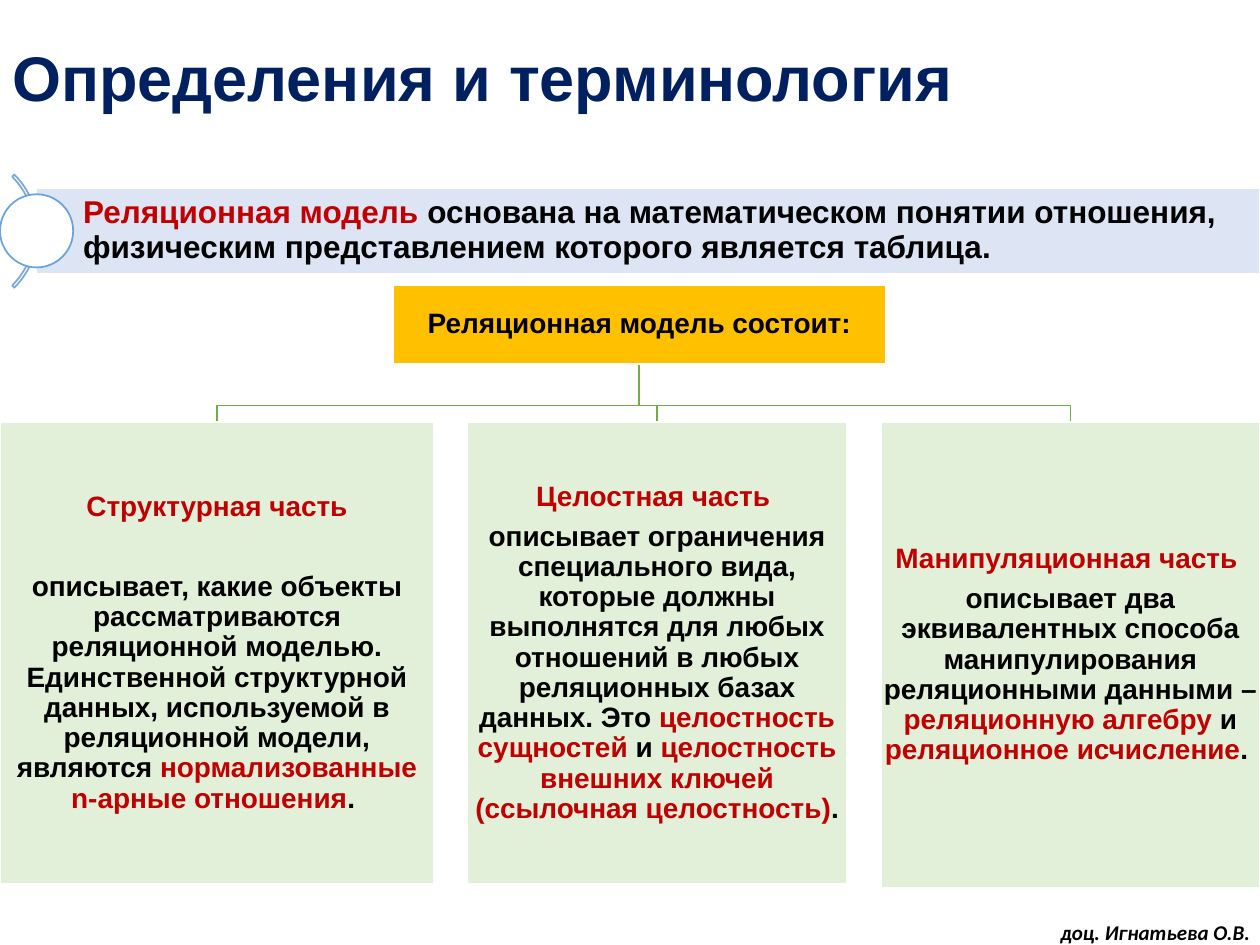
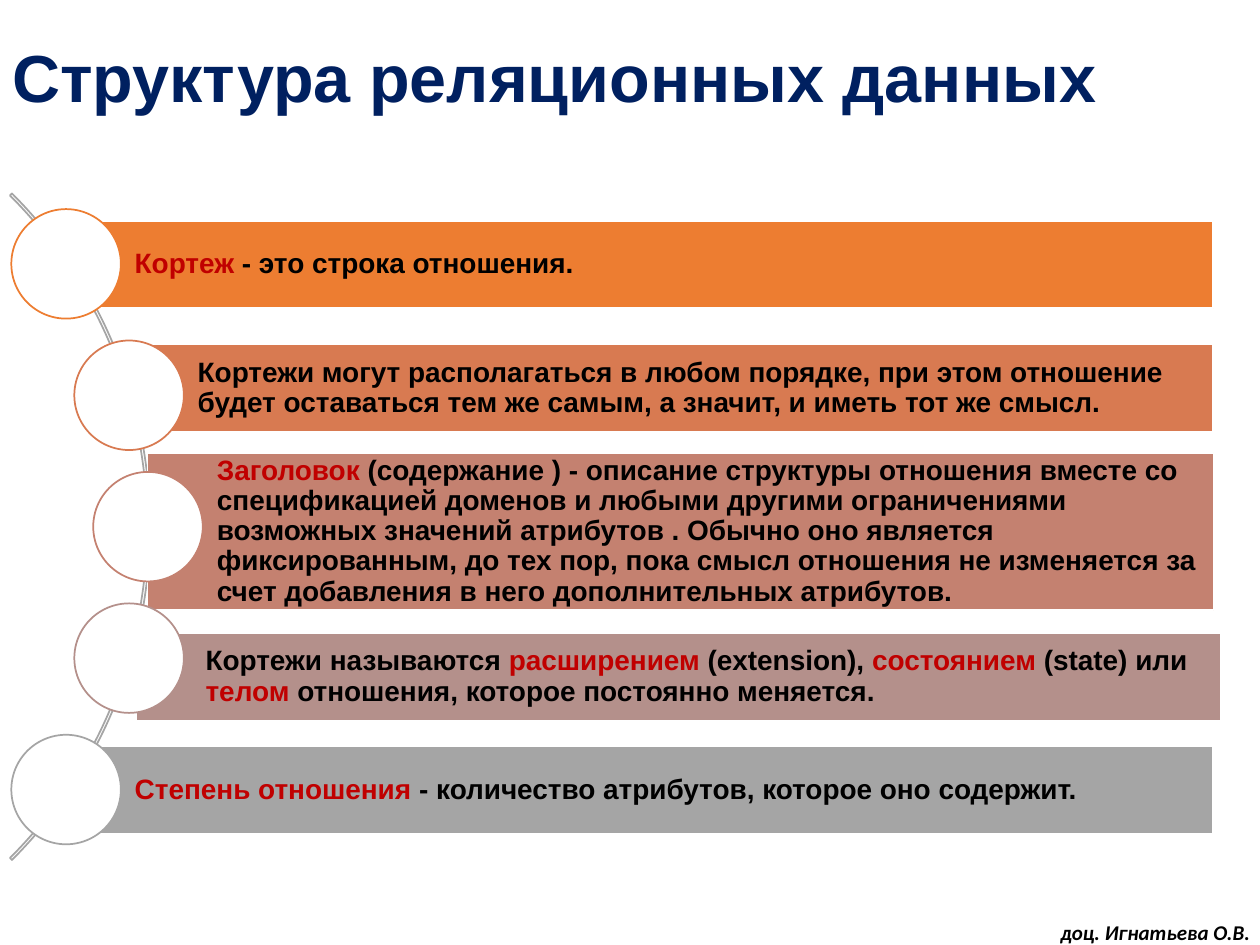
"""Builds two slides on the definitions and data structure of the relational model."""
from lxml import etree
from pptx import Presentation
from pptx import util as u
from pptx.dml.color import RGBColor
from pptx.enum import shapes, text
from pptx.oxml.ns import qn

Pt = u.Pt
MSO = shapes.MSO_SHAPE
COLORS = {
    "navy": "002060", "black": "000000", "red": "C00000", "white": "FFFFFF",
    "gold": "FFC000", "mint": "E2F0D9", "green": "70AD47",
    "pale": "DAE3F3", "blue": "5B9BD5", "sky": "7AA9DA",
    "orange": "ED7D31", "copper": "D87A51", "clay": "C48170",
    "mauve": "B4908B", "gray": "A5A5A5",
}
LEFT, CENTER = text.PP_ALIGN.LEFT, text.PP_ALIGN.CENTER


def add_box(s, kind, x, y, w, h, fill, line):
    sp = s.shapes.add_shape(kind, Pt(x), Pt(y), Pt(w), Pt(h))
    sp.shadow.inherit = False
    if fill:
        sp.fill.solid()
        sp.fill.fore_color.rgb = RGBColor.from_string(COLORS[fill])
    else:
        sp.fill.background()
    sp.line.color.rgb = RGBColor.from_string(COLORS[line])
    sp.line.width = Pt(1)
    return sp


def write(sp, paragraphs, size, insets, align=LEFT, after=(0,), spacing=0.9, font="Arial", italic=False):
    tf = sp.text_frame
    tf.word_wrap = True
    tf.vertical_anchor = text.MSO_ANCHOR.MIDDLE
    tf.margin_left, tf.margin_top, tf.margin_right, tf.margin_bottom = map(Pt, insets)
    for i, runs in enumerate(paragraphs):
        p = tf.paragraphs[0] if i == 0 else tf.add_paragraph()
        p.alignment = align
        p.line_spacing = spacing
        p.space_after = Pt(after[i])
        for color, words in runs:
            r = p.add_run()
            r.text = words
            r.font.name, r.font.size = font, Pt(size)
            r.font.bold, r.font.italic = True, italic
            r.font.color.rgb = RGBColor.from_string(COLORS[color])


prs = Presentation()
prs.slide_width, prs.slide_height = Pt(720), Pt(540)

for title, size in (("Определения и терминология", 36), ("Структура реляционных данных", 38)):
    s = prs.slides.add_slide(prs.slide_layouts[6])
    tb = s.shapes.add_textbox(Pt(0), Pt(7.9), Pt(720), Pt(77))
    write(tb, [[("navy", title)]], size, (7.2, 3.6, 7.2, 3.6))
    tb = s.shapes.add_textbox(Pt(599), Pt(522), Pt(124.6), Pt(21.6))
    write(tb, [[("black", "доц. Игнатьева О.В.")]], 12, (7.2, 3.6, 7.2, 3.6),
          spacing=1, font="Calibri", italic=True)

model, structure = prs.slides

root_x, root_y, root_w, root_h = 224.6, 162.7, 281.5, 45.4
card_y, bus_y = 241.2, 231.8
cards = [
    (0.2, 247.6, 264.2, 28.5,
     [("red", "Структурная часть")],
     [("black", "описывает, какие объекты рассматриваются реляционной моделью. Единственной "
                "структурной данных, используемой в реляционной модели, являются "),
      ("red", "нормализованные n-арные отношения"), ("black", ". ")]),
    (267.1, 216.7, 264.2, 5.6,
     [("red", "Целостная часть ")],
     [("black", "описывает ограничения специального вида, которые должны выполнятся для любых "
                "отношений в любых реляционных базах данных. Это "),
      ("red", "целостность сущностей"), ("black", " и "),
      ("red", "целостность внешних ключей (ссылочная целостность)"), ("black", ".")]),
    (503.3, 216.7, 266.4, 5.6,
     [("red", "Манипуляционная часть ")],
     [("black", "описывает два эквивалентных способа манипулирования реляционными данными – "),
      ("red", "реляционную алгебру "), ("black", "и "),
      ("red", "реляционное исчисление"), ("black", ". ")]),
]

root_mid = root_x + root_w / 2
for x, w, *_ in cards:
    mid = x + w / 2
    fb = model.shapes.build_freeform(Pt(root_mid), Pt(root_y + root_h))
    fb.add_line_segments([(Pt(root_mid), Pt(bus_y)), (Pt(mid), Pt(bus_y)), (Pt(mid), Pt(card_y))], close=False)
    branch = fb.convert_to_shape()
    branch.shadow.inherit = False
    branch.fill.background()
    branch.line.color.rgb = RGBColor.from_string(COLORS["green"])
    branch.line.width = Pt(1)

root = add_box(model, MSO.RECTANGLE, root_x, root_y, root_w, root_h, "gold", "white")
write(root, [[("black", "Реляционная модель состоит:")]], 16, (0.7,) * 4, CENTER)
for x, w, h, gap, heading, body in cards:
    card = add_box(model, MSO.RECTANGLE, x, card_y, w, h, "mint", "white")
    write(card, [heading, body], 16, (0.7,) * 4, CENTER, after=(gap, 5.6))

arc = add_box(model, MSO.BLOCK_ARC, -69.8, 86.4, 91.4, 91.4, None, "sky")
arc.adjustments[0], arc.adjustments[1], arc.adjustments[2] = 189, 27, 0.019
band = add_box(model, MSO.RECTANGLE, 20.9, 107.3, 699.1, 49.2, "pale", "white")
write(band, [[("red", "Реляционная модель "),
              ("black", "основана на математическом понятии отношения, физическим "
                        "представлением которого является таблица.")]],
      18, (26.6, 3.6, 3.6, 3.6))
marker = add_box(model, MSO.OVAL, 0, 111, 41.8, 41.8, "white", "blue")
for clr in (band._element.spPr.xpath("./a:solidFill/a:srgbClr")
            + marker._element.spPr.xpath("./a:ln/a:solidFill/a:srgbClr")):
    etree.SubElement(clr, qn("a:alpha")).set("val", "90000")

arc = add_box(structure, MSO.BLOCK_ARC, -452.9, 31.7, 538.6, 538.6, None, "gray")
arc.adjustments[0], arc.adjustments[1], arc.adjustments[2] = 189, 27, 0.003

circle_y, circle_step, circle_size = 119.5, 75.1, 62.6
rows = [
    ("orange", 6.5, 37.4, 126.2, 655.9, 50,
     [("red", "Кортеж"), ("black", " - это строка отношения.")]),
    ("copper", 42.5, 73.4, 196.9, 619.9, 50,
     [("black", "Кортежи могут располагаться в любом порядке, при этом отношение будет "
                "оставаться тем же самым, а значит, и иметь тот же смысл.")]),
    ("clay", 53.3, 84.4, 258.8, 609.1, 90,
     [("red", "Заголовок "),
      ("black", "(содержание ) - описание структуры отношения вместе со спецификацией доменов "
                "и любыми другими ограничениями возможных значений атрибутов . Обычно оно "
                "является фиксированным, до тех пор, пока смысл отношения не изменяется за "
                "счет добавления в него дополнительных атрибутов.")]),
    ("mauve", 42.5, 77.9, 361.9, 619.9, 50,
     [("black", "Кортежи называются "), ("red", "расширением"), ("black", " (extension), "),
      ("red", "состоянием"), ("black", " (state) или "), ("red", "телом"),
      ("black", " отношения, которое постоянно меняется.")]),
    ("gray", 6.5, 37.4, 426.5, 655.9, 50,
     [("red", "Степень отношения "), ("black", "- количество атрибутов, которое оно содержит.")]),
]
for i, (color, circle_x, x, y, w, h, runs) in enumerate(rows):
    bar = add_box(structure, MSO.RECTANGLE, x, y, w, h, color, "white")
    write(bar, [runs], 16, (39.6, 2.9, 2.9, 2.9))
    add_box(structure, MSO.OVAL, circle_x, circle_y + i * circle_step, circle_size, circle_size, "white", color)

prs.save("out.pptx")
